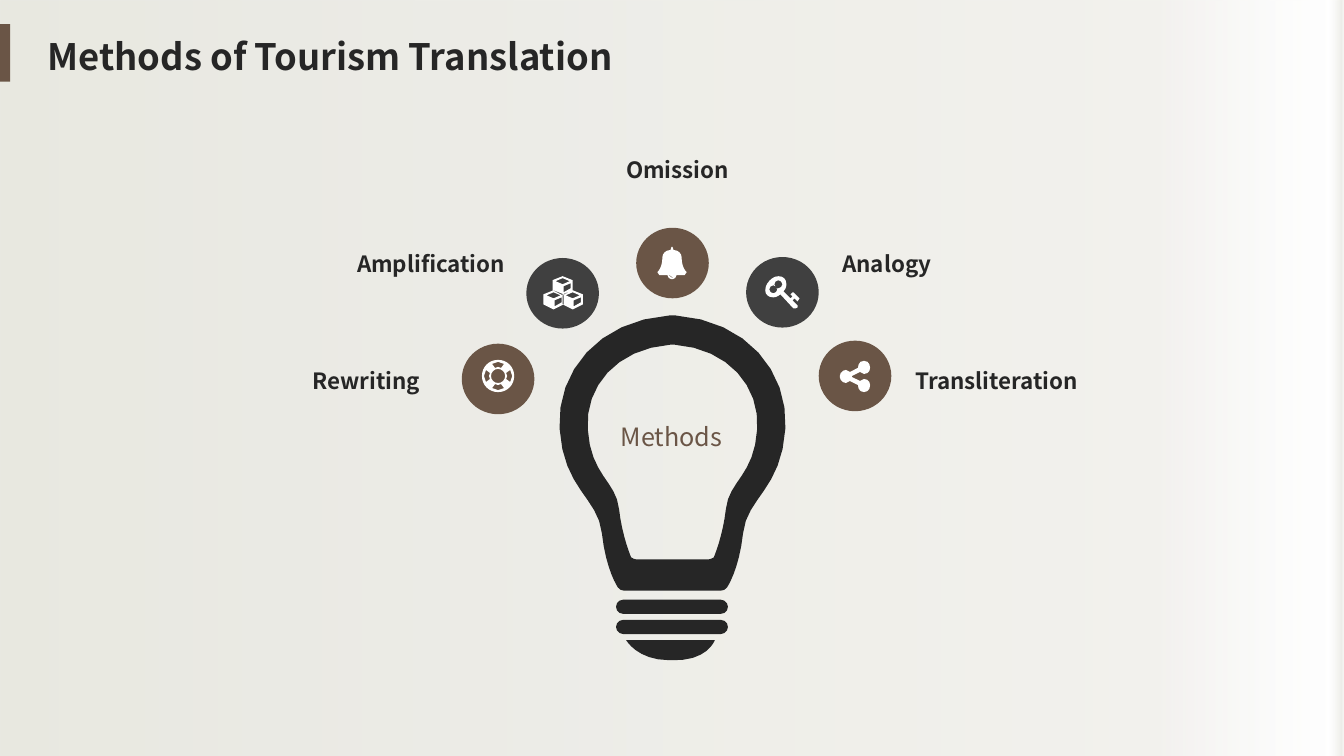
from math import dist

from lxml.etree import SubElement
from pptx import Presentation
from pptx.dml.color import RGBColor
from pptx.enum.shapes import MSO_SHAPE
from pptx.enum.text import MSO_ANCHOR, MSO_AUTO_SIZE, PP_ALIGN
from pptx.oxml.ns import qn
from pptx.util import Pt

PX = 9144  # 100 px to the inch
FONT = "Noto Sans CJK SC"
COLORS = {"ink": "262626", "brown": "6A5546", "gray": "404040", "white": "FFFFFF"}
# Backdrop stops: position %, colour, opacity %
STOPS = [(0, "E7E7DF", 94), (86, "F0EFEB", 85), (99, "FFFFFF", 62), (100, "EBEBE5", 100)]

# Outlines: a start point, then lines (x, y) or cubic curves (six numbers)
GLASS = [(670, 313), (741, 318, 782, 369, 779, 425), (775, 486, 741, 493, 737, 529),
         (733, 566, 721, 583, 721, 583), (720, 585, 717, 586, 715, 586)]
HOLLOW = [(669, 342), (723, 346, 754, 384, 751, 426), (748, 472, 723, 477, 720, 505),
          (717, 532, 708, 553, 708, 553), (706, 554, 705, 555, 703, 555)]
BASE = [(621, 635), (709, 635), (709, 635, 702, 657, 664, 655),
        (632, 655, 621, 635, 621, 635)]
BELL = [(667, 245), (668, 248), (673, 248, 676, 252, 676, 255),
        (676, 264, 679, 268, 681, 270), (681, 272, 680, 273, 679, 273), (671, 273),
        (671, 275, 669, 277, 667, 277)]
GLINT = [(667, 275), (664, 273), (663, 273), (667, 276)]
KEY = [(791, 299), (788, 296), (786, 298), (791, 303), (791, 305), (789, 306),
       (787, 306), (774, 292), (772, 294, 769, 295, 767, 295),
       (762, 295, 759, 292, 759, 288), (759, 281, 766, 274, 772, 274),
       (777, 274, 780, 277, 780, 282), (780, 285, 779, 287, 777, 289), (784, 296),
       (786, 294), (784, 292), (786, 290), (787, 290), (793, 296)]
EYE = [(772, 278), (770, 278, 768, 280, 768, 282), (769, 284), (767, 283),
       (765, 283, 763, 285, 763, 287), (763, 289, 765, 291, 767, 291),
       (769, 291, 771, 289, 771, 287), (770, 286), (772, 286),
       (774, 286, 776, 284, 776, 282), (776, 280, 774, 278, 772, 278)]
SHARE = [(845, 374), (853, 378), (854, 377, 855, 376, 857, 376),
         (861, 376, 863, 379, 863, 382), (863, 386, 861, 389, 857, 389),
         (853, 389, 851, 386, 851, 382), (843, 378), (842, 379, 841, 380, 839, 380),
         (836, 380, 833, 377, 833, 374)]
RING = [(0, -16), (9, -16, 16, -9, 16, 0), (16, 9, 9, 16, 0, 16),
        (-9, 16, -16, 9, -16, 0), (-16, -9, -9, -16, 0, -16)]
SLOT = [(-6, -12), (-3, -8), (0, -9), (3, -8), (6, -12), (0, -14)]


def bend(outline):
    """Turn lines and cubic curves into points, more for longer curves."""
    dots = [outline[0]]
    for part in outline[1:]:
        if len(part) == 2:
            dots.append(part)
            continue
        knots = [dots[-1], part[:2], part[2:4], part[4:]]
        steps = min(8, max(1, round(dist(knots[0], knots[3]) / 3)))
        for step in range(1, steps + 1):
            t = step / steps
            rates = ((1 - t) ** 3, 3 * t * (1 - t) ** 2, 3 * t * t * (1 - t), t ** 3)
            dots.append(tuple(sum(r * k[i] for r, k in zip(rates, knots)) for i in (0, 1)))
    return dots


def mirror(outline, sum_x=0, sum_y=0):
    """Complete half an outline by its reflection across one axis."""
    half = bend(outline)
    return half + [(sum_x - x if sum_x else x, sum_y - y if sum_y else y)
                   for x, y in reversed(half)]


def cubes():
    rings = []
    for x, y in ((558, 274), (549, 288), (568, 288)):
        rings.append([(x, y), (x + 10, y + 4), (x + 10, y + 14), (x, y + 19),
                      (x - 10, y + 14), (x - 10, y + 4)])
        rings.append([(x, y + 2), (x + 7, y + 5), (x, y + 8), (x - 7, y + 5)])
        rings.append([(x + 1, y + 10), (x + 8, y + 7), (x + 8, y + 12), (x + 1, y + 16)])
    return rings


def buoy(mid_x, mid_y):
    ring, slot = bend(RING), SLOT
    rings = [ring, [(x * 7 / 16, y * 7 / 16) for x, y in ring[::2]]]
    for _ in range(4):
        rings.append(slot)
        slot = [(-y, x) for x, y in slot]
    return [[(mid_x + x, mid_y + y) for x, y in dots] for dots in rings]


def paint(shape, color):
    shape.shadow.inherit = False
    shape.fill.solid()
    shape.fill.fore_color.rgb = RGBColor.from_string(COLORS[color])
    shape.line.fill.background()


def draw(slide, rings, color):
    rings = [[(x * PX, y * PX) for x, y in ring] for ring in rings]
    pen = slide.shapes.build_freeform(*rings[0][0])
    for i, ring in enumerate(rings):
        if i:
            pen.move_to(*ring[0])
        pen.add_line_segments(ring[1:], close=True)
    paint(pen.convert_to_shape(), color)


def add_form(slide, kind, box, color):
    shape = slide.shapes.add_shape(kind, *(n * PX for n in box))
    paint(shape, color)
    return shape


def write(frame, text, size, color, align, bold=True):
    frame.text = text
    frame.vertical_anchor = MSO_ANCHOR.TOP
    par = frame.paragraphs[0]
    par.alignment = align
    par.font.name, par.font.size, par.font.bold = FONT, Pt(size), bold
    par.font.color.rgb = RGBColor.from_string(COLORS[color])


def add_text(slide, text, box, size, color, align, bold=True, inset=0):
    frame = slide.shapes.add_textbox(*(n * PX for n in box)).text_frame
    frame.word_wrap = False
    frame.margin_left = frame.margin_right = inset * 2 * PX
    frame.margin_top = frame.margin_bottom = inset * PX
    write(frame, text, size, color, align, bold)


def add_back(slide):
    back = add_form(slide, MSO_SHAPE.RECTANGLE, (0, 0, 1333, 750), "white")
    back.fill.gradient()
    back.fill.gradient_angle = 0
    stops = back.element.spPr.find(qn("a:gradFill")).find(qn("a:gsLst"))
    for stop in list(stops):
        stops.remove(stop)
    for place, color, alpha in STOPS:
        stop = SubElement(stops, qn("a:gs"), pos=str(place * 1000))
        tint = SubElement(stop, qn("a:srgbClr"), val=color)
        SubElement(tint, qn("a:alpha"), val=str(alpha * 1000))
    # Behind the title
    slide.shapes.title.element.addprevious(back.element)


def add_title(slide, text):
    title = slide.shapes.title
    title.left, title.top, title.width, title.height = (n * PX for n in (37, 29, 615, 54))
    title.text_frame.auto_size = MSO_AUTO_SIZE.NONE
    write(title.text_frame, text, 26, "ink", PP_ALIGN.LEFT)


def add_bulb(slide):
    for top in (595, 615):
        bar = add_form(slide, MSO_SHAPE.ROUNDED_RECTANGLE, (611, top, 111, 14), "ink")
        bar.adjustments[0] = 0.5
    draw(slide, [bend(BASE)], "ink")
    draw(slide, [mirror(GLASS, sum_x=1334), mirror(HOLLOW, sum_x=1334)], "ink")
    add_text(slide, "Methods", (602, 413, 128, 40), 18, "brown", PP_ALIGN.CENTER, False, 5)


def main():
    deck = Presentation()
    deck.slide_width, deck.slide_height = 1333 * PX, 750 * PX
    slide = deck.slides.add_slide(deck.slide_layouts[5])

    # Backdrop and heading
    add_back(slide)
    add_form(slide, MSO_SHAPE.RECTANGLE, (0, 24, 10, 57), "brown")
    add_title(slide, "Methods of Tourism Translation")
    add_bulb(slide)

    # Methods: label, its box, alignment, badge corner, badge colour, icon
    left, right = PP_ALIGN.LEFT, PP_ALIGN.RIGHT
    methods = [
        ("Rewriting", (310, 364, 109), left, (458, 341), "brown", buoy(494, 373)),
        ("Amplification", (348, 248, 153), right, (522, 256), "gray", cubes()),
        ("Omission", (611, 155, 112), right, (631, 226), "brown",
         [mirror(BELL, sum_x=1333), GLINT]),
        ("Analogy", (830, 248, 94), right, (740, 255), "gray", [bend(KEY), bend(EYE)]),
        ("Transliteration", (908, 364, 164), left, (812, 338), "brown",
         [mirror(SHARE, sum_y=747)]),
    ]
    for label, box, align, spot, color, icon in methods:
        add_text(slide, label, (*box, 27), 16, "ink", align)
        add_form(slide, MSO_SHAPE.OVAL, (*spot, 72, 70), color)
        draw(slide, icon, "white")

    deck.save("out.pptx")


if __name__ == "__main__":
    main()
